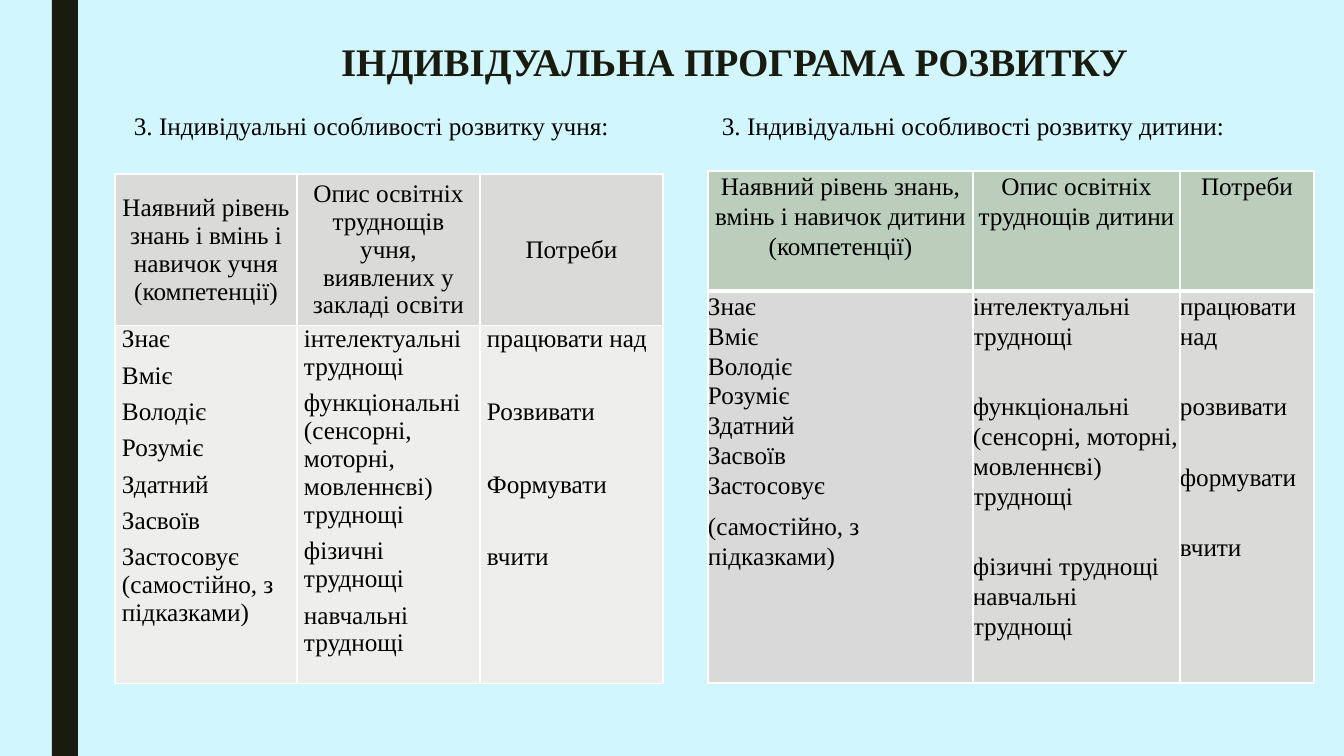
from lxml import etree
from pptx import Presentation
from pptx.dml.color import RGBColor
from pptx.enum.shapes import MSO_SHAPE
from pptx.enum.text import MSO_ANCHOR, MSO_AUTO_SIZE, PP_ALIGN
from pptx.oxml.ns import qn
from pptx.util import Pt

PX = 12192000 / 1344
SLIDE_SIZE = (1344, 756)
FONT = "Times New Roman"
TOP, MIDDLE = MSO_ANCHOR.TOP, MSO_ANCHOR.MIDDLE
LEFT, CENTER, JUSTIFY = PP_ALIGN.LEFT, PP_ALIGN.CENTER, PP_ALIGN.JUSTIFY
NO_AUTOFIT = MSO_AUTO_SIZE.NONE
RECTANGLE = MSO_SHAPE.RECTANGLE

SKY = RGBColor(0xD2, 0xF6, 0xFE)
DARK = RGBColor(0x19, 0x1B, 0x0E)
BLACK = RGBColor(0, 0, 0)
WHITE = RGBColor(0xFF, 0xFF, 0xFF)
GREY = RGBColor(0xDA, 0xDB, 0xD9)
PLAIN_GREY = RGBColor(0xD9, 0xD9, 0xD9)
PALE_GREY = RGBColor(0xEE, 0xEE, 0xED)
SAGE = RGBColor(0xBB, 0xCD, 0xBB)

BAR = (52, 0, 26, 756)
TITLE = "ІНДИВІДУАЛЬНА ПРОГРАМА РОЗВИТКУ"
TITLE_BOX = (151, 25, 1167, 69)
TITLE_FONT = {"size": Pt(27.9), "bold": True, "name": FONT}
BODY_FONT = {"size": Pt(18), "bold": False, "name": FONT}

HEADINGS = [
    ("3. Індивідуальні особливості розвитку учня:", (124, 105, 547, 40), LEFT),
    ("3. Індивідуальні особливості розвитку дитини:", (712, 105, 606, 40), JUSTIFY),
]

PUPIL = {
    "corner": (115, 174),
    "columns": [182, 183, 183],
    "rows": [140, 332],
    "headers": ["Наявний рівень знань і вмінь і навичок учня (компетенції)",
                "Опис освітніх труднощів учня, виявлених у закладі освіти",
                "Потреби"],
    "details": [
        [(6, "Знає"), (6, "Вміє"), (6, "Володіє"), (6, "Розуміє"), (6, "Здатний"),
         (6, "Засвоїв"), (6, "Застосовує (самостійно, з підказками)")],
        [(6, "інтелектуальні труднощі"),
         (6, "функціональні (сенсорні, моторні, мовленнєві) труднощі"),
         (6, "фізичні труднощі"), (6, "навчальні труднощі")],
        [(6, "працювати над"), (32, "Розвивати"), (32, "Формувати"), (32, "вчити")],
    ],
    "header_fill": GREY,
    "detail_fills": [PALE_GREY] * 3,
    "header_anchor": MIDDLE,
    "inset": 7,
    "spacing": 1.0,
    "divider": 1,
}
CHILD = {
    "corner": (708, 171),
    "columns": [265, 207, 134],
    "rows": [120, 392],
    "headers": ["Наявний рівень знань, вмінь і навичок дитини (компетенції)",
                "Опис освітніх труднощів дитини",
                "Потреби"],
    "details": [
        [(0, "Знає"), (0, "Вміє"), (0, "Володіє"), (0, "Розуміє"), (0, "Здатний"),
         (0, "Засвоїв"), (0, "Застосовує"), (8, "(самостійно, з підказками)")],
        [(0, "інтелектуальні труднощі"),
         (29, "функціональні (сенсорні, моторні, мовленнєві) труднощі"),
         (29, "фізичні труднощі"), (0, "навчальні труднощі")],
        [(0, "працювати над"), (29, "розвивати"), (29, "формувати"), (29, "вчити")],
    ],
    "header_fill": SAGE,
    "detail_fills": [PLAIN_GREY, GREY, GREY],
    "header_anchor": TOP,
    "inset": 0,
    "spacing": 1.07,
    "divider": 3,
}


def px(length):
    return round(length * PX)


def apply(target, values):
    for name, value in values.items():
        setattr(target, name, value)


def write(frame, lines, align, font, color, spacing=1.0):
    for index, (gap, text) in enumerate(lines):
        paragraph = frame.paragraphs[0] if index == 0 else frame.add_paragraph()
        apply(paragraph, {"alignment": align, "line_spacing": spacing,
                          "space_before": Pt(gap), "space_after": Pt(0)})
        run = paragraph.add_run()
        run.text = text
        apply(run.font, font)
        run.font.color.rgb = color


def draw_borders(cell, top, bottom):
    properties = cell._tc.get_or_add_tcPr()
    sides = {"lnL": 1, "lnR": 1, "lnT": top, "lnB": bottom}
    for index, (side, width) in enumerate(sides.items()):
        line = etree.Element(qn(f"a:{side}"), w=str(Pt(width)))
        fill = etree.SubElement(line, qn("a:solidFill"))
        etree.SubElement(fill, qn("a:srgbClr"), val=str(WHITE))
        properties.insert(index, line)


def fill_cell(cell, lines, align, color, anchor, plan):
    apply(cell, {"margin_left": px(plan["inset"]), "margin_right": px(plan["inset"]),
                 "margin_top": 0, "margin_bottom": 0, "vertical_anchor": anchor})
    cell.fill.solid()
    cell.fill.fore_color.rgb = color
    write(cell.text_frame, lines, align, BODY_FONT, BLACK, plan["spacing"])


def add_program(slide, plan):
    columns, rows = plan["columns"], plan["rows"]
    box = (*plan["corner"], sum(columns), sum(rows))
    table = slide.shapes.add_table(len(rows), len(columns), *map(px, box)).table
    apply(table, {"first_row": False, "horz_banding": False})
    for row, height in zip(table.rows, rows):
        row.height = px(height)
    for index, width in enumerate(columns):
        table.columns[index].width = px(width)
        header, detail = table.cell(0, index), table.cell(1, index)
        fill_cell(header, [(0, plan["headers"][index])], CENTER,
                  plan["header_fill"], plan["header_anchor"], plan)
        fill_cell(detail, plan["details"][index], LEFT,
                  plan["detail_fills"][index], TOP, plan)
        draw_borders(header, 1, plan["divider"])
        draw_borders(detail, plan["divider"], 1)


def main():
    deck = Presentation()
    deck.slide_width, deck.slide_height = map(px, SLIDE_SIZE)
    slide = deck.slides.add_slide(deck.slide_layouts[5])
    slide.background.fill.solid()
    slide.background.fill.fore_color.rgb = SKY

    bar = slide.shapes.add_shape(RECTANGLE, *map(px, BAR))
    bar.shadow.inherit = False
    bar.fill.solid()
    bar.fill.fore_color.rgb = DARK
    bar.line.fill.background()

    title = slide.shapes.title
    apply(title, dict(zip(("left", "top", "width", "height"), map(px, TITLE_BOX))))
    apply(title.text_frame, {"vertical_anchor": TOP, "word_wrap": True,
                             "auto_size": NO_AUTOFIT})
    write(title.text_frame, [(0, TITLE)], CENTER, TITLE_FONT, DARK, 1.15)

    for text, box, align in HEADINGS:
        heading = slide.shapes.add_textbox(*map(px, box)).text_frame
        apply(heading, {"word_wrap": True, "vertical_anchor": MIDDLE})
        write(heading, [(0, text)], align, BODY_FONT, BLACK)

    for plan in (PUPIL, CHILD):
        add_program(slide, plan)
    deck.save("out.pptx")


if __name__ == "__main__":
    main()
